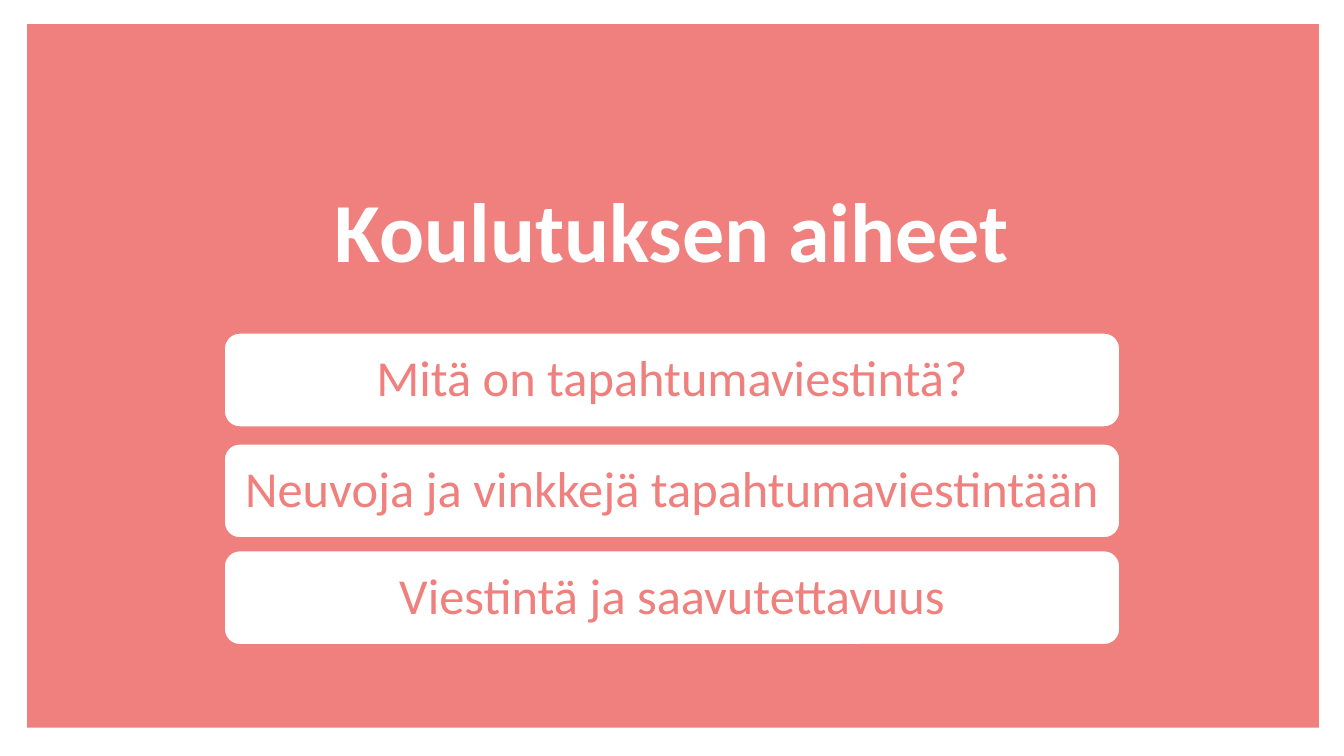
from dataclasses import dataclass

from pptx import Presentation
from pptx.dml.color import RGBColor
from pptx.enum.shapes import MSO_SHAPE
from pptx.enum.text import MSO_ANCHOR, PP_ALIGN
from pptx.shapes.autoshape import Shape
from pptx.slide import Slide
from pptx.text.text import TextFrame
from pptx.util import Inches, Pt

COLORS = {"coral": "EF807D", "white": "FFFFFF"}
FONT = "Calibri"


@dataclass
class Topic:
    text: str
    top: float


TOPICS = [
    Topic("Mitä on tapahtumaviestintä?", 3.3),
    Topic("Neuvoja ja vinkkejä tapahtumaviestintään", 4.4),
    Topic("Viestintä ja saavutettavuus", 5.46),
]


def rgb(name: str) -> RGBColor:
    return RGBColor.from_string(COLORS[name])


def add_filled(s: Slide, kind: MSO_SHAPE, left: float, top: float,
               width: float, height: float, fill: str) -> Shape:
    """Add a flat shape without outline or shadow."""
    sp = s.shapes.add_shape(kind, Inches(left), Inches(top), Inches(width), Inches(height))
    sp.shadow.inherit = False
    sp.fill.solid()
    sp.fill.fore_color.rgb = rgb(fill)
    sp.line.fill.background()
    return sp


def set_text(tf: TextFrame, text: str, size: int, color: str, bold: bool = False) -> None:
    tf.word_wrap = True
    tf.vertical_anchor = MSO_ANCHOR.MIDDLE
    p = tf.paragraphs[0]
    p.text = text
    p.alignment = PP_ALIGN.CENTER
    p.line_spacing = 0.9
    p.font.name = FONT
    p.font.size = Pt(size)
    p.font.bold = bold
    p.font.color.rgb = rgb(color)


def add_title(s: Slide, text: str) -> None:
    sp = s.shapes.add_textbox(Inches(0.26), Inches(1.26), Inches(12.81), Inches(2.15))
    set_text(sp.text_frame, text, 60, "white", bold=True)


def add_topic(s: Slide, topic: Topic) -> None:
    sp = add_filled(s, MSO_SHAPE.ROUNDED_RECTANGLE, 2.22, topic.top, 8.89, 0.94, "white")
    sp.line.color.rgb = rgb("coral")
    sp.line.width = Pt(1.5)
    tf = sp.text_frame
    tf.margin_left = tf.margin_right = tf.margin_top = tf.margin_bottom = Inches(0.15)
    set_text(tf, topic.text, 36, "coral")


def main() -> None:
    prs = Presentation()
    prs.slide_width, prs.slide_height = Inches(13.33), Inches(7.5)
    s = prs.slides.add_slide(prs.slide_layouts[6])
    add_filled(s, MSO_SHAPE.RECTANGLE, 0.27, 0.24, 12.81, 6.98, "coral")
    add_title(s, "Koulutuksen aiheet")
    for topic in TOPICS:
        add_topic(s, topic)
    prs.save("out.pptx")


if __name__ == "__main__":
    main()
